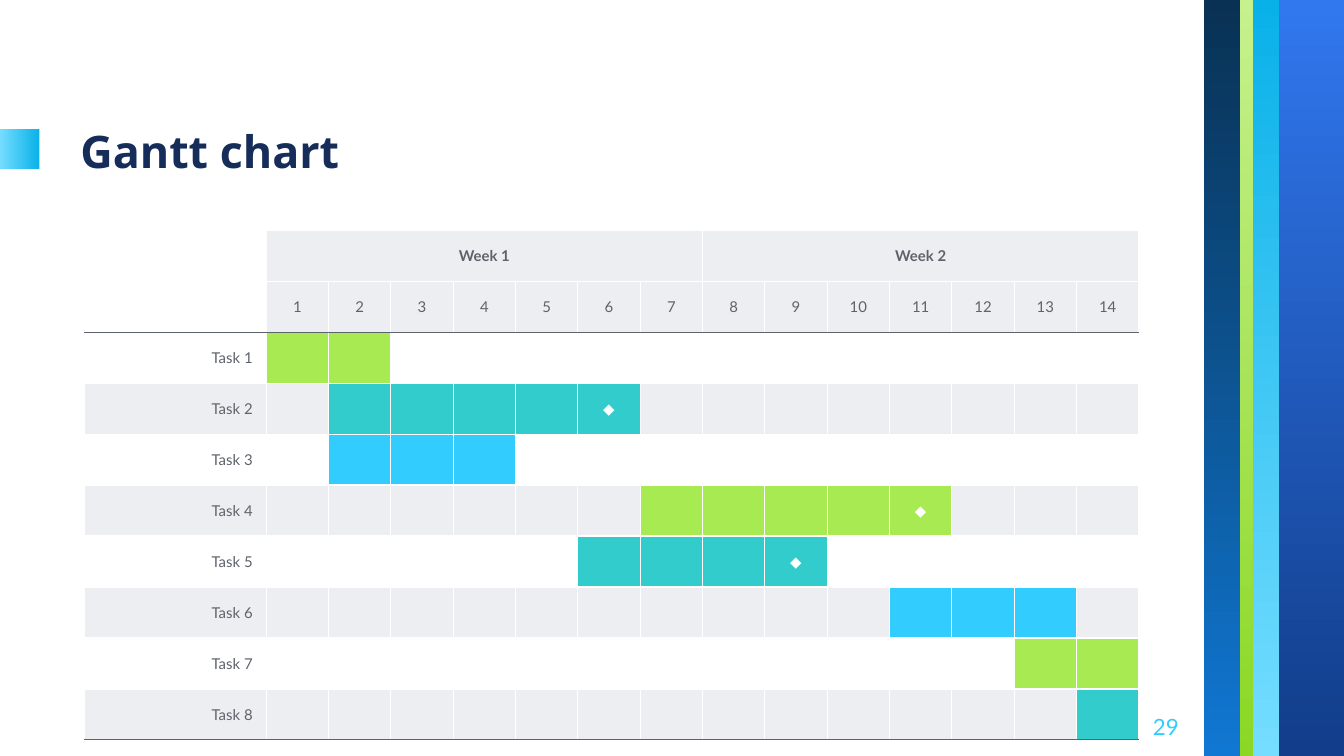
from lxml import etree
from pptx import Presentation
from pptx import util as u
from pptx.dml.color import RGBColor
from pptx.enum import shapes, text
from pptx.oxml.ns import qn

WHITE, PALE, GREY, NAVY = "FFFFFF", "EDEEF1", "5E626B", "162D5A"
LIME, TEAL, SKY = "A7EA52", "33CCCC", "33CCFF"
DAYS, WEEK = 14, 7
LEFT, CENTER, RIGHT = text.PP_ALIGN.LEFT, text.PP_ALIGN.CENTER, text.PP_ALIGN.RIGHT
TOP_STOPS = ("75DDFF", "09B1E9")

# Each task: first day, last day, colour, whether it ends in a milestone
TASKS = [
    (1, 2, LIME, False),
    (2, 6, TEAL, True),
    (2, 4, SKY, False),
    (7, 11, LIME, True),
    (6, 9, TEAL, True),
    (11, 13, SKY, False),
    (13, 14, LIME, False),
    (14, 14, TEAL, False),
]


def colour(value):
    """Turn a hex string into a colour."""
    return RGBColor.from_string(value)


def write(frame, words, size=8, font="Lato", fill=GREY, bold=False, align=LEFT):
    """Write one formatted paragraph into a text frame."""
    para = frame.paragraphs[0]
    para.alignment = align
    if not words:
        etree.SubElement(para._p, qn("a:endParaRPr"), sz=str(size * 100))
        return
    span = para.add_run()
    span.text = words
    span.font.size = u.Pt(size)
    span.font.name = font
    span.font.bold = bold
    span.font.color.rgb = colour(fill)


def add_text(page, left, top, width, height, words, anchor, **style):
    """Add a wrapping text box with even insets."""
    box = page.shapes.add_textbox(u.Pt(left), u.Pt(top), u.Pt(width), u.Pt(height))
    frame = box.text_frame
    frame.word_wrap = True
    frame.vertical_anchor = anchor
    frame.margin_left = frame.margin_right = u.Pt(7.2)
    frame.margin_top = frame.margin_bottom = u.Pt(7.2)
    write(frame, words, **style)


def add_gradient(page, left, top, width, height, stops, rotation=0):
    """Add a borderless rectangle with a vertical two-colour gradient."""
    box = page.shapes.add_shape(shapes.MSO_SHAPE.RECTANGLE, u.Pt(left), u.Pt(top),
                                u.Pt(width), u.Pt(height))
    box.shadow.inherit = False
    box.rotation = rotation
    box.line.fill.background()
    box.fill.gradient()
    box.fill.gradient_angle = 270
    for stop, value in zip(box.fill.gradient_stops, stops):
        stop.color.rgb = colour(value)


def add_stripes(page, left, top, height):
    """Draw the four vertical stripes from left to right."""
    stripes = [
        (19.3, ("1077D2", "093153"), 180),
        (7, ("C6F18D", "8AD824"), 0),
        (13.9, TOP_STOPS, 180),
        (34.8, ("3177EE", "113D8A"), 0),
    ]
    for width, stops, rotation in stripes:
        add_gradient(page, left, top, width, height, stops, rotation)
        left += width


def add_heading(page, left, top, width, height):
    """Draw the marker at the page edge and the title beside it."""
    add_gradient(page, 0, top + 24.4, 21.2, 21.2, TOP_STOPS, 270)
    add_text(page, left, top, width, height, "Gantt chart", text.MSO_ANCHOR.BOTTOM,
             size=24, font="Noto Sans", fill=NAVY, bold=True)


def set_borders(cell, top, bottom):
    """Draw all four borders of a cell, white at the sides."""
    properties = cell._tc.get_or_add_tcPr()
    sides = [("a:lnL", WHITE), ("a:lnR", WHITE), ("a:lnT", top), ("a:lnB", bottom)]
    for index, (tag, value) in enumerate(sides):
        line = etree.Element(qn(tag), w=str(u.Pt(0.75)))
        fill = etree.SubElement(line, qn("a:solidFill"))
        etree.SubElement(fill, qn("a:srgbClr"), val=value)
        properties.insert(index, line)


def cell_content(row, day):
    """Give the words, cell fill and text format for a row and day."""
    if row < 2:
        if day == 0:
            return "", None, {}
        if row == 1:
            return str(day), PALE, {"align": CENTER}
        words = f"Week {day // WEEK + 1}" if day % WEEK == 1 else ""
        return words, PALE, {"align": CENTER, "bold": True}
    first, last, bar, milestone = TASKS[row - 2]
    band = PALE if row % 2 else None
    if day == 0:
        return f"Task {row - 1}", band, {"align": RIGHT}
    words = "◆" if milestone and day == last else ""
    fill = bar if first <= day <= last else band
    return words, fill, {"align": CENTER, "fill": WHITE}


def add_gantt(page, left, top, width, height, label_width=97.2):
    """Build the Gantt table in the given box."""
    rows = len(TASKS) + 2
    table = page.shapes.add_table(rows, DAYS + 1, u.Pt(left), u.Pt(top),
                                  u.Pt(width), u.Pt(height)).table
    table.first_row = table.horz_banding = False
    for index, column in enumerate(table.columns):
        column.width = u.Pt((width - label_width) / DAYS if index else label_width)
    for row, line in enumerate(table.rows):
        line.height = u.Pt(height / rows)
        for day, cell in enumerate(line.cells):
            words, fill, style = cell_content(row, day)
            cell.vertical_anchor = text.MSO_ANCHOR.MIDDLE
            cell.margin_left = cell.margin_right = u.Pt(7.2)
            cell.margin_top = cell.margin_bottom = u.Pt(3.6)
            write(cell.text_frame, words, **style)
            if fill:
                cell.fill.solid()
                cell.fill.fore_color.rgb = colour(fill)
            else:
                cell.fill.background()
            set_borders(cell, GREY if row == 2 else WHITE,
                        GREY if row in (1, rows - 1) else WHITE)
    for start in range(1, DAYS, WEEK):
        table.cell(0, start).merge(table.cell(0, start + WEEK - 1))


def main():
    """Build and save the slide."""
    deck = Presentation()
    deck.slide_width, deck.slide_height = u.Pt(720), u.Pt(405)
    page = deck.slides.add_slide(deck.slide_layouts[6])
    add_stripes(page, 645, 0, 405)
    add_heading(page, 36, 44.7, 417.6, 57.6)
    add_text(page, 595.4, 373.7, 43.2, 31, "29", text.MSO_ANCHOR.MIDDLE,
             size=12, fill=SKY, align=RIGHT)
    add_gantt(page, 45.4, 123.4, 565, 273)
    deck.save("out.pptx")


if __name__ == "__main__":
    main()
